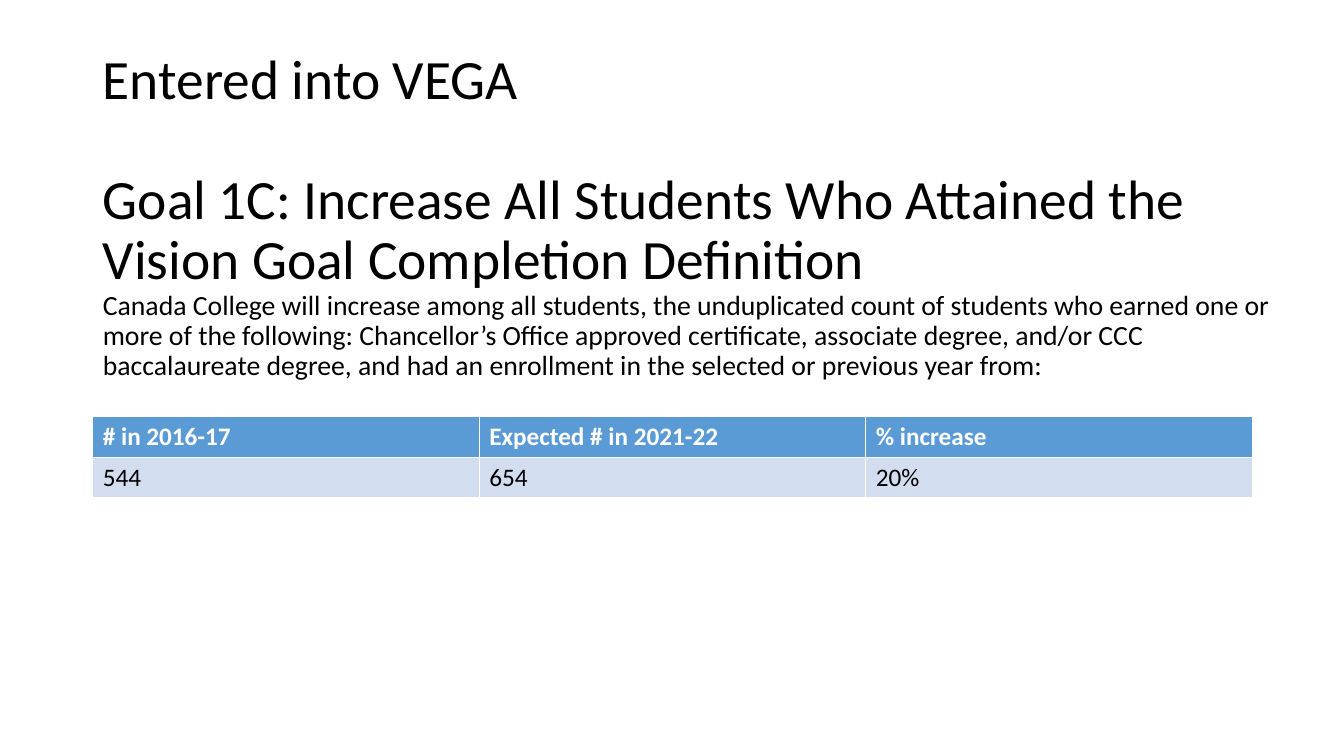
from dataclasses import dataclass

from pptx import Presentation
from pptx.dml.color import RGBColor
from pptx.enum.text import MSO_ANCHOR, MSO_AUTO_SIZE, PP_ALIGN
from pptx.util import Inches, Pt

LEFT = PP_ALIGN.LEFT
MIDDLE = MSO_ANCHOR.MIDDLE
NO_AUTOFIT = MSO_AUTO_SIZE.NONE
TITLE_ONLY_LAYOUT = 5


@dataclass(frozen=True)
class Theme:
    font: str = "Calibri"
    text: RGBColor = RGBColor(0x00, 0x00, 0x00)
    header_text: RGBColor = RGBColor(0xFF, 0xFF, 0xFF)
    header_fill: RGBColor = RGBColor(0x5B, 0x9B, 0xD5)
    row_fill: RGBColor = RGBColor(0xD2, 0xDE, 0xEF)
    heading_size: float = 39.6
    detail_size: float = 19.8
    table_size: float = 18


THEME = Theme()


def add_run(paragraph, text, size, color, bold=False):
    run = paragraph.add_run()
    run.text = text
    run.font.name = THEME.font
    run.font.size = Pt(size)
    run.font.color.rgb = color
    run.font.bold = bold


presentation = Presentation()
presentation.slide_width = Inches(13.33)
presentation.slide_height = Inches(7.5)
slide = presentation.slides.add_slide(presentation.slide_layouts[TITLE_ONLY_LAYOUT])

# Title: status, goal and its definition
title = slide.shapes.title
title.left, title.top = Inches(0.92), Inches(1.57)
title.width, title.height = Inches(12.1), Inches(1.45)
title_frame = title.text_frame
title_frame.word_wrap = True
title_frame.auto_size = NO_AUTOFIT
title_frame.vertical_anchor = MIDDLE
title_frame.margin_bottom = Inches(0.35)

title_parts = [
    ("Entered into VEGA", THEME.heading_size, 0),
    ("Goal 1C: Increase All Students Who Attained the Vision Goal Completion Definition",
     THEME.heading_size, 43),
    ("Canada College will increase among all students, the unduplicated count of students "
     "who earned one or more of the following: Chancellor’s Office approved certificate, "
     "associate degree, and/or CCC baccalaureate degree, and had an enrollment in the "
     "selected or previous year from:", THEME.detail_size, 0),
]
for index, (text, size, space_before) in enumerate(title_parts):
    paragraph = title_frame.add_paragraph() if index else title_frame.paragraphs[0]
    paragraph.alignment = LEFT
    paragraph.line_spacing = 0.9
    paragraph.space_before = Pt(space_before)
    add_run(paragraph, text, size, THEME.text)

# Target table
target_rows = [
    ("# in 2016-17", "Expected # in 2021-22", "% increase"),
    ("544", "654", "20%"),
]
table = slide.shapes.add_table(
    len(target_rows), len(target_rows[0]),
    Inches(0.92), Inches(4.13), Inches(11.5), Inches(0.81),
).table
for row_index, values in enumerate(target_rows):
    is_header = row_index == 0
    for column_index, value in enumerate(values):
        cell = table.cell(row_index, column_index)
        cell.fill.solid()
        cell.fill.fore_color.rgb = THEME.header_fill if is_header else THEME.row_fill
        add_run(cell.text_frame.paragraphs[0], value, THEME.table_size,
                THEME.header_text if is_header else THEME.text, bold=is_header)

presentation.save("out.pptx")
